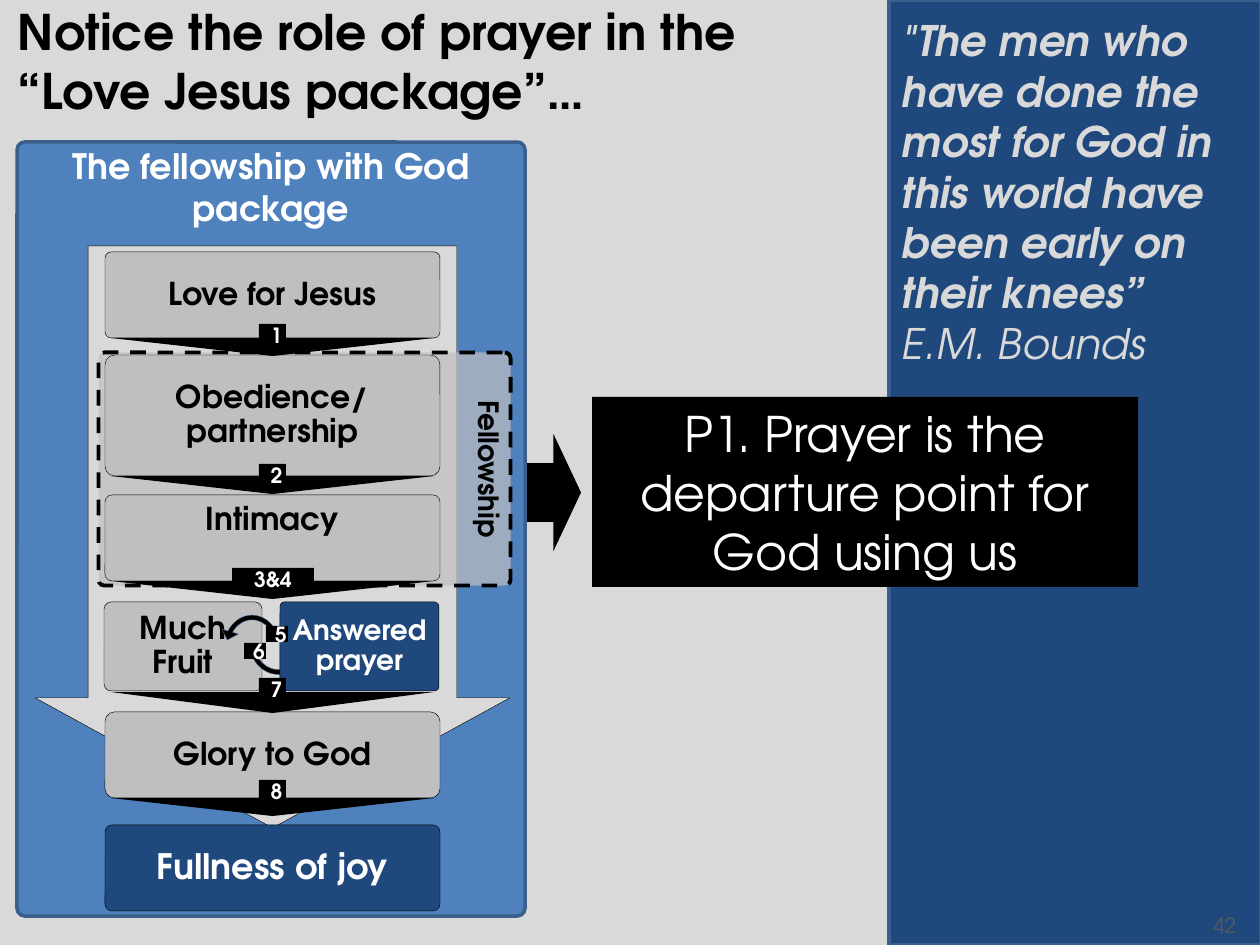
from lxml import etree
from pptx import Presentation
from pptx.dml.color import RGBColor
from pptx.enum.dml import MSO_LINE
from pptx.enum.shapes import MSO_SHAPE
from pptx.enum.text import MSO_ANCHOR, PP_ALIGN
from pptx.oxml.ns import qn
from pptx.util import Pt

PX = 914400 / 126
FONT = "TeX Gyre Adventor"
RECT, ROUND = MSO_SHAPE.RECTANGLE, MSO_SHAPE.ROUNDED_RECTANGLE
DOWN, RIGHT = MSO_SHAPE.DOWN_ARROW, MSO_SHAPE.RIGHT_ARROW
CIRCULAR = MSO_SHAPE.CIRCULAR_ARROW
TOP, MIDDLE = MSO_ANCHOR.TOP, MSO_ANCHOR.MIDDLE
LEFT, CENTER, RIGHT_ALIGN = PP_ALIGN.LEFT, PP_ALIGN.CENTER, PP_ALIGN.RIGHT
BLACK, WHITE, PALE, GREY = "000000", "FFFFFF", "D9D9D9", "BFBFBF"
NAVY, BLUE, EDGE = "1F497D", "4F81BD", "3A5F8C"

prs = Presentation()
prs.slide_width, prs.slide_height = round(1260 * PX), round(945 * PX)
s = prs.slides.add_slide(prs.slide_layouts[6])
s.background.fill.solid()
s.background.fill.fore_color.rgb = RGBColor.from_string(PALE)


def add_shape(kind, box, fill, line=None, width=0.25, adj=()):
    sp = s.shapes.add_shape(kind, *[round(v * PX) for v in box])
    sp.shadow.inherit = False
    sp.fill.solid()
    sp.fill.fore_color.rgb = RGBColor.from_string(fill)
    if line:
        sp.line.color.rgb = RGBColor.from_string(line)
        sp.line.width = Pt(width)
    else:
        sp.line.fill.background()
    for i, value in enumerate(adj):
        sp.adjustments[i] = value
    return sp


def set_text(sp, text, size, color, bold=True, align=CENTER, anchor=MIDDLE,
             margins=(13, 6, 13, 6), spacing=None):
    """Fill a shape with text; margins are left, top, right, bottom in px."""
    tf = sp.text_frame
    tf.word_wrap = True
    tf.vertical_anchor = anchor
    tf.margin_left, tf.margin_top, tf.margin_right, tf.margin_bottom = [
        round(m * PX) for m in margins]
    tf.text = text
    for p in tf.paragraphs:
        p.alignment = align
        if spacing:
            p.line_spacing = spacing
        for r in p.runs:
            r.font.name, r.font.size, r.font.bold = FONT, Pt(size), bold
            r.font.color.rgb = RGBColor.from_string(color)


def_box = (5, -4, 1211, 89)
add_shape(RECT, (889, 0, 372, 945), NAVY, EDGE, 2)
title = s.shapes.add_textbox(*[round(v * PX) for v in def_box])
set_text(title, "Notice the role of prayer in the\v“Love Jesus package”…",
         28, BLACK, align=LEFT, anchor=TOP)

point = add_shape(RECT, (592, 397, 546, 190), BLACK)
set_text(point, "P1. Prayer is the departure point for God using us",
         28, WHITE, bold=False)
add_shape(RIGHT, (526, 434, 55, 117), BLACK)

# Fellowship panel
panel = add_shape(ROUND, (17, 142, 508, 774), BLUE, EDGE, 2, [0.015])
set_text(panel, "The fellowship with God package", 20, WHITE, anchor=TOP,
         margins=(13, 0, 13, 6))
add_shape(DOWN, (35, 246, 475, 582), PALE, BLACK, adj=[0.776, 0.274])

fellowship = add_shape(ROUND, (188, 263, 233, 412), GREY, BLACK, 2.25, [0.024])
fellowship.rotation = 90
fellowship.line.dash_style = MSO_LINE.DASH
color = fellowship._element.spPr.find(qn("a:solidFill"))[0]
etree.SubElement(color, qn("a:alpha")).set("val", "70000")
set_text(fellowship, "Fellowship", 16, BLACK, anchor=TOP, spacing=0.9)

# Steps: text, box, fill, text colour, size, corner, anchor
steps = [
    ("Love for Jesus", (105, 252, 335, 86), GREY, BLACK, 18, 0.07, MIDDLE),
    ("Obedience/ partnership", (105, 355, 335, 121), GREY, BLACK, 18, 0.08, MIDDLE),
    ("Intimacy", (105, 495, 335, 86), GREY, BLACK, 18, 0.08, TOP),
    ("Much Fruit", (104, 602, 158, 89), GREY, BLACK, 18, 0.08, MIDDLE),
    ("Glory to God", (105, 712, 335, 86), GREY, BLACK, 18, 0.11, MIDDLE),
    ("Fullness of joy", (105, 825, 335, 86), NAVY, WHITE, 20, 0.08, MIDDLE),
    ("Answered\vprayer", (280, 602, 159, 89), NAVY, WHITE, 16, 0.05, MIDDLE),
]
step_shapes = []
for text, box, fill, ink, size, corner, anchor in steps:
    sp = add_shape(ROUND, box, fill, BLACK, adj=[corner])
    set_text(sp, text, size, ink, anchor=anchor, margins=(5, 6, 5, 6),
             spacing=0.9)
    step_shapes.append(sp)
answered = step_shapes[-1]

for box, flip in [((218, 609, 68, 76), "flipH"), ((243, 605, 71, 76), "flipV")]:
    sp = add_shape(CIRCULAR, box, BLACK, EDGE,
                   adj=[0.067, 11.423, 195.009, 118.169, 0.125])
    sp._element.spPr.xfrm.set(flip, "1")

for top, height in [(338, 18), (476, 18), (581, 18), (692, 21), (798, 18)]:
    add_shape(DOWN, (111, top, 323, height), BLACK, adj=[1, 1])

# The answered-prayer box covers the tail of the lower circular arrow
s.shapes._spTree.append(answered._element)

badges = [
    ("1", (259, 324, 27, 23)), ("2", (259, 464, 27, 23)),
    ("3&4", (232, 568, 82, 22)), ("7", (259, 678, 27, 23)),
    ("8", (259, 780, 27, 23)), ("6", (244, 643, 22, 16)),
    ("5", (266, 626, 22, 16)),
]
for text, box in badges:
    sp = add_shape(RECT, box, BLACK)
    indent = 8 if len(text) == 1 else 0
    set_text(sp, text, 12, WHITE, margins=(indent, 0, 0, 0))

quote = s.shapes.add_textbox(*[round(v * PX) for v in (889, 9, 372, 624)])
set_text(quote, "\"The men who have done the most for God in this world have "
         "been early on their knees”\nE.M. Bounds", 24, PALE, align=LEFT,
         anchor=TOP)
for p in quote.text_frame.paragraphs:
    p.runs[0].font.italic = True
quote.text_frame.paragraphs[1].runs[0].font.bold = False

number = s.shapes.add_textbox(*[round(v * PX) for v in (1150, 908, 99, 34)])
set_text(number, "42", 12, "595959", bold=False, align=RIGHT_ALIGN)

prs.save("out.pptx")
